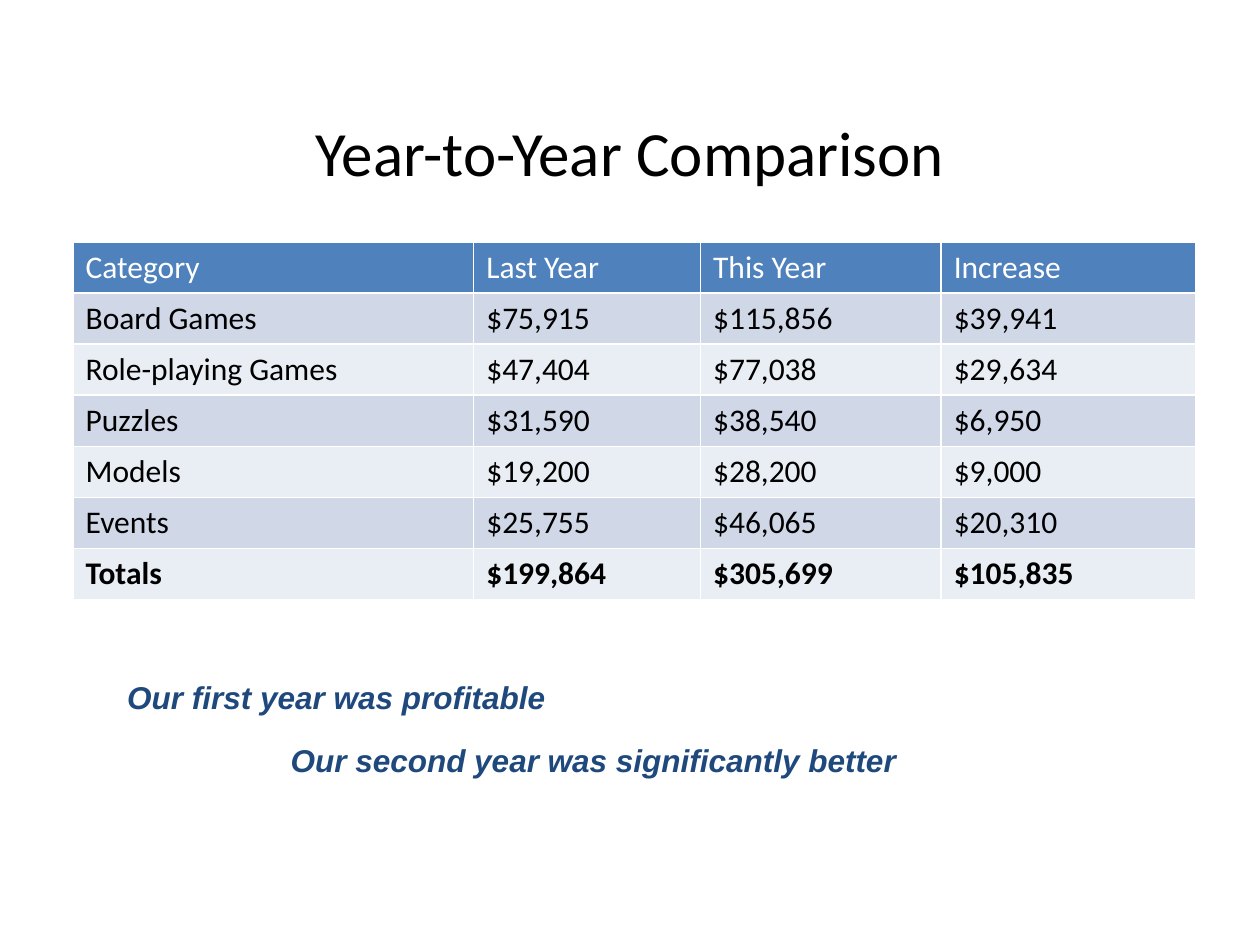
from pptx import Presentation
from pptx.dml.color import RGBColor
from pptx.enum.text import MSO_ANCHOR, PP_ALIGN
from pptx.oxml import parse_xml
from pptx.oxml.ns import nsdecls
from pptx.util import Inches, Pt

BLACK = RGBColor(0x00, 0x00, 0x00)
WHITE = RGBColor(0xFF, 0xFF, 0xFF)
NAVY = RGBColor(0x1F, 0x49, 0x7D)
HEADER_BLUE = RGBColor(0x4F, 0x81, 0xBD)
BAND_DARK = RGBColor(0xD0, 0xD8, 0xE8)
BAND_LIGHT = RGBColor(0xE9, 0xED, 0xF4)


def write(para, text, color, **formats):
    span = para.add_run()
    span.text = text
    span.font.color.rgb = color
    for name, value in formats.items():
        setattr(span.font, name, value)


def add_border(cell, sides):
    properties = cell._tc.get_or_add_tcPr()
    for side in sides:
        properties.append(parse_xml(
            f'<a:ln{side} {nsdecls("a")} w="12700"><a:solidFill>'
            f'<a:srgbClr val="{WHITE}"/></a:solidFill></a:ln{side}>'))


deck = Presentation()
deck.slide_width, deck.slide_height = Inches(10), Inches(7.5)
page = deck.slides.add_slide(deck.slide_layouts[6])

# Title and closing remarks
title_format = {"name": "Calibri", "size": Pt(36)}
remark_format = {"name": "Arial", "size": Pt(18), "bold": True, "italic": True}
texts = [
    ("Year-to-Year Comparison", (0.5, 0.3, 9, 1.25),
     MSO_ANCHOR.BOTTOM, BLACK, title_format),
    ("Our first year was profitable", (0.67, 5.33, 4, 0.4),
     MSO_ANCHOR.TOP, NAVY, remark_format),
    ("Our second year was significantly better", (2.17, 5.83, 5.08, 0.4),
     MSO_ANCHOR.TOP, NAVY, remark_format),
]
for text, place, anchor, color, formats in texts:
    box = page.shapes.add_textbox(*map(Inches, place))
    frame = box.text_frame
    frame.word_wrap = True
    frame.vertical_anchor = anchor
    para = frame.paragraphs[0]
    para.alignment = PP_ALIGN.CENTER
    write(para, text, color, **formats)

# Comparison table
rows = [
    ("Category", "Last Year", "This Year", "Increase"),
    ("Board Games", "$75,915", "$115,856", "$39,941"),
    ("Role-playing Games", "$47,404", "$77,038", "$29,634"),
    ("Puzzles", "$31,590", "$38,540", "$6,950"),
    ("Models", "$19,200", "$28,200", "$9,000"),
    ("Events", "$25,755", "$46,065", "$20,310"),
    ("Totals", "$199,864", "$305,699", "$105,835"),
]
column_widths = [3.18, 1.8, 1.91, 2.02]
table = page.shapes.add_table(
    len(rows), len(column_widths),
    Inches(0.58), Inches(1.92), Inches(8.92), Inches(2.84)).table
for column, width in zip(table.columns, column_widths):
    column.width = Inches(width)

for row_index, row in enumerate(rows):
    is_header = row_index == 0
    is_total = row_index == len(rows) - 1
    band = BAND_DARK if row_index % 2 else BAND_LIGHT
    for column_index, text in enumerate(row):
        cell = table.cell(row_index, column_index)
        add_border(cell, "LRTB")
        cell.fill.solid()
        cell.fill.fore_color.rgb = HEADER_BLUE if is_header else band
        write(cell.text_frame.paragraphs[0], text,
              WHITE if is_header else BLACK,
              name="Calibri", size=Pt(18), bold=is_total)

deck.save("out.pptx")
